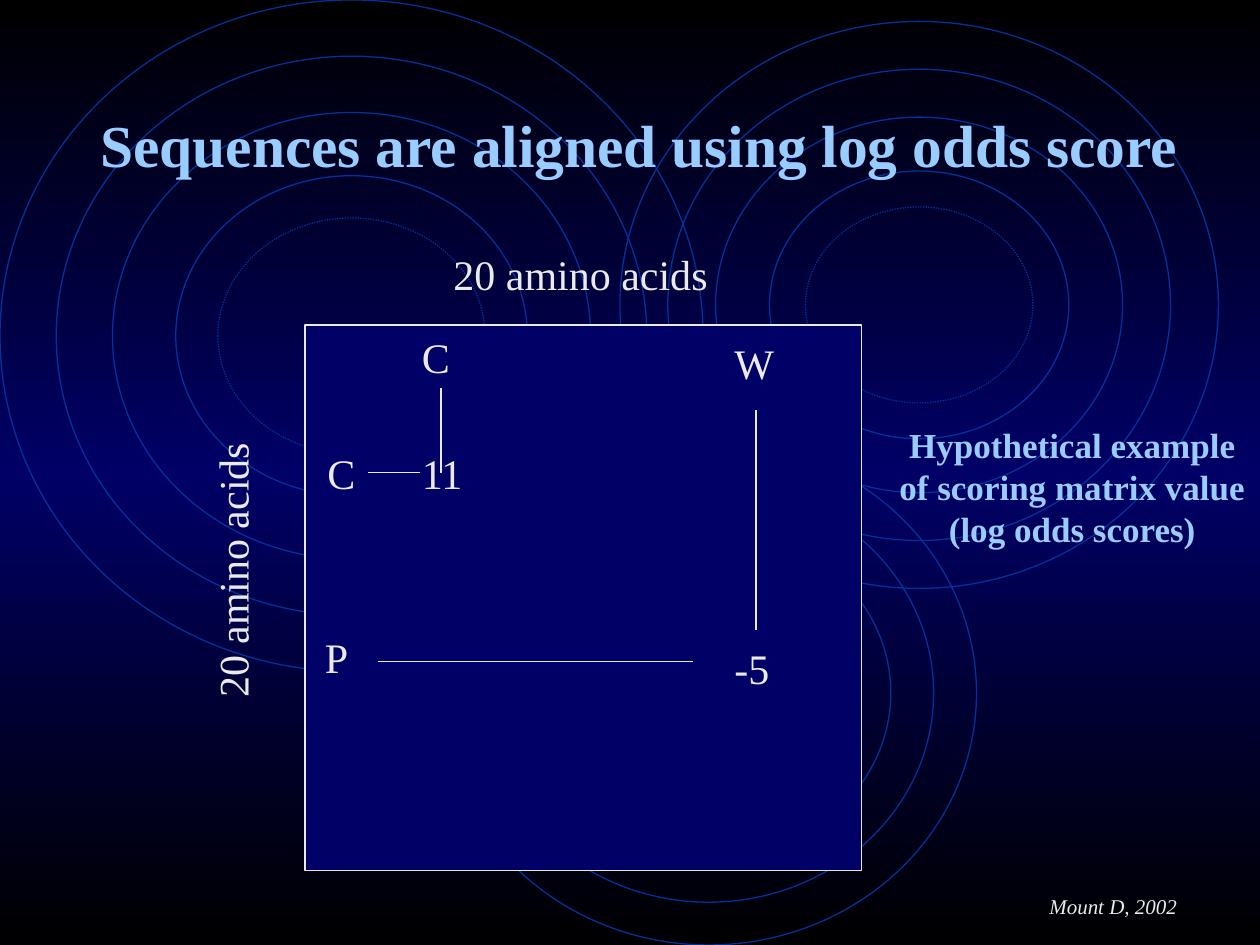
import copy
from dataclasses import dataclass

import pptx
import pptx.dml.color
import pptx.enum.dml
import pptx.enum.shapes
import pptx.enum.text
import pptx.oxml.xmlchemy
import pptx.util
from pptx.util import Inches

RGB = pptx.dml.color.RGBColor.from_string


@dataclass(frozen=True)
class Theme:
    """Colours, font and type sizes of the slide."""
    edge: str = "000000"
    panel: str = "000066"
    ring: str = "003399"
    accent: str = "99CCFF"
    text: str = "EAEAEA"
    font: str = "Times New Roman"
    heading_size: int = 34
    label_size: int = 24
    caption_size: int = 20
    credit_size: int = 12
    line_width: float = 0.75


THEME = Theme()


def place(shape, box):
    """Give a shape the left, top, width and height of a box in inches."""
    shape.left, shape.top, shape.width, shape.height = map(Inches, box)


def style_line(line, color):
    """Set the colour and width of an outline."""
    line.color.rgb = RGB(color)
    line.width = pptx.util.Pt(THEME.line_width)


def add_run(paragraph, text, size, color, bold=False, italic=False):
    """Append a formatted run to a paragraph."""
    run = paragraph.add_run()
    run.text = text
    run.font.name = THEME.font
    run.font.size = pptx.util.Pt(size)
    run.font.color.rgb = RGB(color)
    run.font.bold = bold
    run.font.italic = italic


def add_label(slide, box, text, size=THEME.label_size, color=THEME.text,
              wrap=False, **emphasis):
    """Add a one-line text box that grows with its text."""
    label = slide.shapes.add_textbox(*map(Inches, box))
    label.text_frame.word_wrap = wrap
    label.text_frame.auto_size = pptx.enum.text.MSO_AUTO_SIZE.SHAPE_TO_FIT_TEXT
    add_run(label.text_frame.paragraphs[0], text, size, color, **emphasis)
    return label


def add_guide(slide, start, end):
    """Add a thin straight line between two points in inches."""
    guide = slide.shapes.add_connector(
        pptx.enum.shapes.MSO_CONNECTOR.STRAIGHT, *map(Inches, (*start, *end)))
    style_line(guide.line, THEME.text)
    properties = guide._element.spPr
    properties.append(properties.makeelement(
        pptx.oxml.ns.qn("a:effectLst"), {}))
    return guide


def paint_background(slide):
    """Fill the background with a dark-blue-dark vertical gradient."""
    fill = slide.background.fill
    fill.gradient()
    fill.gradient_angle = 270
    stop_list = slide._element.xpath(".//a:gsLst")[0]
    stop_list.append(copy.deepcopy(stop_list[-1]))
    colors = (THEME.edge, THEME.panel, THEME.edge)
    for stop, position, color in zip(fill.gradient_stops, (0, 0.5, 1), colors):
        stop.position = position
        stop.color.rgb = RGB(color)


def add_ripple(slide, box, ring_count):
    """Draw nested rings whose insets are shares of the outer width."""
    left, top, width, height = box
    insets = (0, 0.08, 0.16, 0.25, 0.31)
    for share in insets[:ring_count]:
        inset = width * share
        ring = slide.shapes.add_shape(
            pptx.enum.shapes.MSO_SHAPE.OVAL,
            *map(Inches, (left + inset, top + inset,
                          width - 2 * inset, height - 2 * inset)))
        ring.shadow.inherit = False
        ring.fill.background()
        style_line(ring.line, THEME.ring)
        if share == insets[-1]:
            ring.line.dash_style = pptx.enum.dml.MSO_LINE.ROUND_DOT


def add_caption(slide, box):
    """Place the title as a caption beside the matrix."""
    caption = slide.shapes.title
    slide.shapes._spTree.append(caption._element)
    place(caption, box)
    frame = caption.text_frame
    frame.word_wrap = True
    frame.auto_size = pptx.enum.text.MSO_AUTO_SIZE.NONE
    frame.vertical_anchor = pptx.enum.text.MSO_ANCHOR.MIDDLE
    paragraph = frame.paragraphs[0]
    paragraph.alignment = pptx.enum.text.PP_ALIGN.CENTER
    style = (THEME.caption_size, THEME.accent, True)
    add_run(paragraph, "Hypothetical example of scoring matrix value", *style)
    paragraph.add_line_break()
    add_run(paragraph, "(log odds scores)", *style)


def add_matrix(slide, box):
    """Draw the scoring matrix with its axes, residues, scores and guides."""
    left, top, width, height = box

    def at(x, y):
        """Shift a point from the matrix corner onto the slide."""
        return left + x, top + y

    panel = slide.shapes.add_shape(
        pptx.enum.shapes.MSO_SHAPE.RECTANGLE, *map(Inches, box))
    panel.shadow.inherit = False
    panel.fill.solid()
    panel.fill.fore_color.rgb = RGB(THEME.panel)
    style_line(panel.line, THEME.text)

    axis = "20 amino acids"
    add_label(slide, (*at(1.08, -0.66), 2.22, 0.5), axis)
    row_axis = add_label(slide, (*at(-1.54, 1.54), 2.22, 0.8), axis)
    row_axis.rotation = 270

    c_row = add_label(slide, (*at(0.08, 0.92), 0.42, 0.5), "C")
    for text, x, y, label_width in (
            ("C", 0.83, 0, 0.42), ("11", 0.83, 0.92, 0.6),
            ("W", 3.31, 0.05, 0.52), ("P", 0.06, 2.38, 0.39),
            ("-5", 3.31, 2.47, 0.48)):
        add_label(slide, (*at(x, y), label_width, 0.5), text)

    c_guide = add_guide(slide, at(0.5, 1.17), at(0.91, 1.17))
    c_guide.begin_connect(c_row, 3)
    for start, end in (((1.08, 0.5), (1.08, 1.17)),
                       ((0.58, 2.67), (3.08, 2.67)),
                       ((3.58, 0.67), (3.58, 2.42))):
        add_guide(slide, at(*start), at(*end))


def main():
    """Build the slide and save it."""
    deck = pptx.Presentation()
    deck.slide_width, deck.slide_height = Inches(10), Inches(7.5)
    slide = deck.slides.add_slide(deck.slide_layouts[5])
    paint_background(slide)
    for box, ring_count in (((0, 0, 5.58, 5.33), 5),
                            ((3.5, 3.5, 4.25, 4), 3),
                            ((4.92, 0.17, 4.75, 4.5), 5)):
        add_ripple(slide, box, ring_count)
    add_caption(slide, (7.02, 3.28, 2.98, 1.16))
    add_matrix(slide, (2.42, 2.58, 4.42, 4.33))
    add_label(slide, (8.23, 7.04, 1.22, 0.3), "Mount D, 2002",
              THEME.credit_size, italic=True)
    add_label(slide, (0.7, 0.81, 8.83, 0.67),
              "Sequences are aligned using log odds score",
              THEME.heading_size, THEME.accent, wrap=True, bold=True)
    deck.save("out.pptx")


if __name__ == "__main__":
    main()
